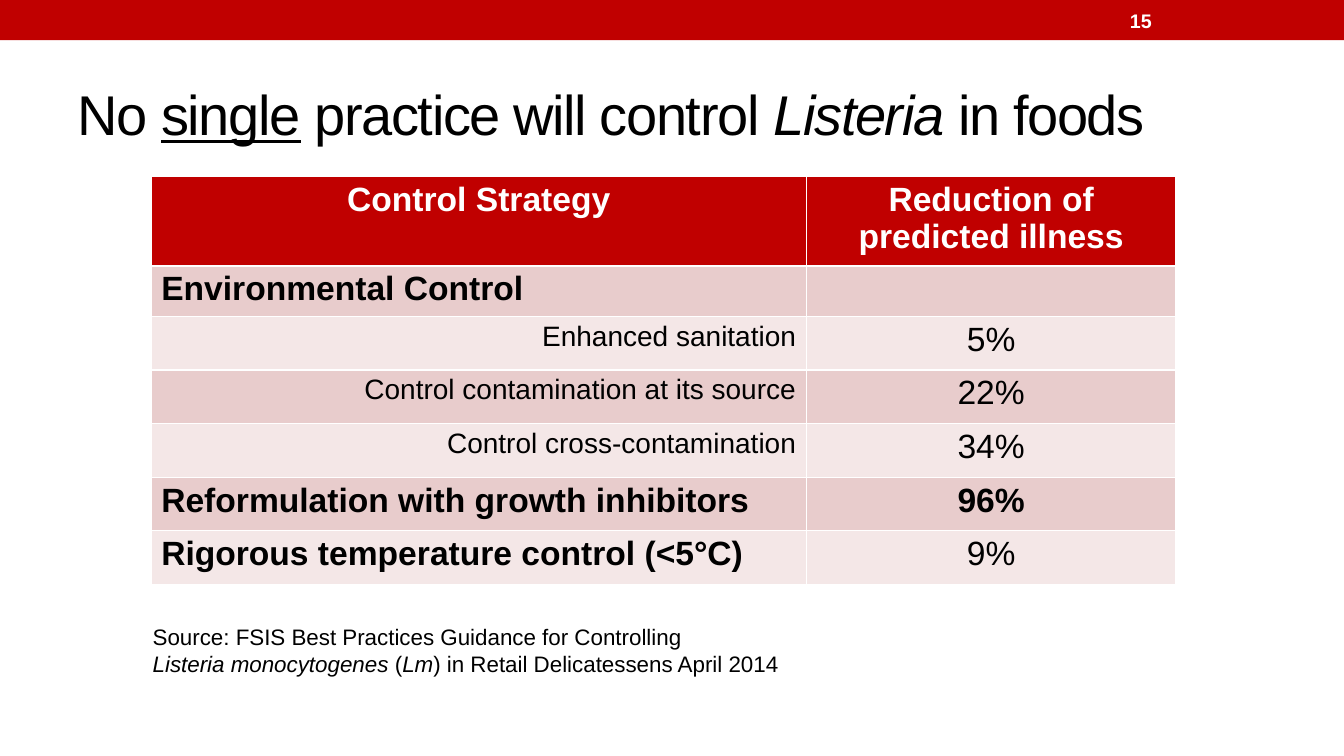
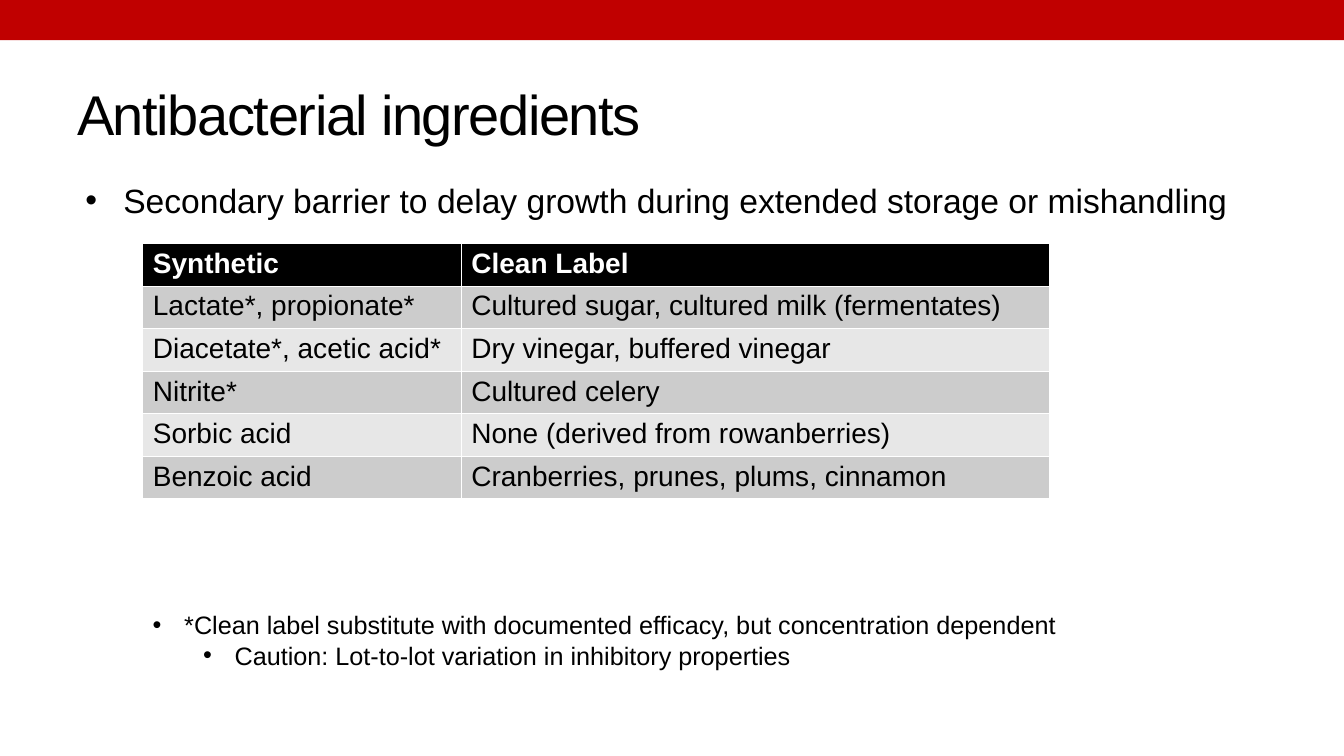
from lxml import etree
from pptx import Presentation
from pptx.dml.color import RGBColor
from pptx.enum.shapes import MSO_SHAPE
from pptx.enum.text import MSO_ANCHOR, PP_ALIGN
from pptx.oxml.ns import qn
from pptx.util import Pt

RECTANGLE = MSO_SHAPE.RECTANGLE
TOP, MIDDLE = MSO_ANCHOR.TOP, MSO_ANCHOR.MIDDLE
LEFT, CENTER, RIGHT = PP_ALIGN.LEFT, PP_ALIGN.CENTER, PP_ALIGN.RIGHT

FONT = "Arial"
COLORS = {
    "red": "C00000", "black": "000000", "white": "FFFFFF",
    "rose": "E8CCCC", "pale_rose": "F4E7E7",
    "gray": "CCCCCC", "pale_gray": "E7E7E7",
}
SLIDE_WIDTH, SLIDE_HEIGHT = 960, 540
BAND_HEIGHT = 28.8
TITLE_BOX = (48, 42, 864, 78)
NUMBER_BOX = (800, 1.5, 112, 26)
CELL_MARGIN = 3.2


def color(name):
    """Return the named palette colour."""
    return RGBColor.from_string(COLORS[name])


def add_runs(paragraph, runs, size, ink="black", bold=False, spacing=None):
    """Add (text, style) runs; style may hold b, i and u."""
    for text, style in runs:
        run = paragraph.add_run()
        run.text = text
        font = run.font
        font.name, font.size = FONT, Pt(size)
        font.color.rgb = color(ink)
        font.bold = bold or "b" in style
        font.italic = "i" in style
        font.underline = "u" in style
        if spacing is not None:
            run._r.get_or_add_rPr().set("spc", str(spacing * 100))


def add_bullet(paragraph, indent, hang):
    """Give the paragraph a hanging round bullet."""
    properties = paragraph._p.get_or_add_pPr()
    properties.set("marL", str(Pt(indent)))
    properties.set("indent", str(-Pt(hang)))
    etree.SubElement(properties, qn("a:buFont")).set("typeface", FONT)
    etree.SubElement(properties, qn("a:buChar")).set("char", "•")


def add_text(slide, box, paragraphs, size, anchor=TOP, indents=(), hang=0,
             line_spacing=None, **style):
    """Place a wrapped text box, with bullets where indents are given."""
    frame = slide.shapes.add_textbox(*map(Pt, box)).text_frame
    frame.word_wrap = True
    frame.vertical_anchor = anchor
    for index, runs in enumerate(paragraphs):
        paragraph = frame.add_paragraph() if index else frame.paragraphs[0]
        if line_spacing:
            paragraph.line_spacing = line_spacing
        if indents:
            add_bullet(paragraph, indents[index], hang)
        add_runs(paragraph, runs, size, **style)


def add_table(slide, box, widths, heights, rows, header_fill, band_fills):
    """Place a banded table of (text, size, align, bold) cells."""
    frame = slide.shapes.add_table(len(rows), len(widths), *map(Pt, box))
    table = frame.table
    for column, width in zip(table.columns, widths):
        column.width = Pt(width)
    for index, (row, height, cells) in enumerate(zip(table.rows, heights, rows)):
        row.height = Pt(height)
        fill = band_fills[(index - 1) % 2] if index else header_fill
        for cell, (text, size, align, bold) in zip(row.cells, cells):
            cell.margin_top = cell.margin_bottom = Pt(CELL_MARGIN)
            cell.fill.solid()
            cell.fill.fore_color.rgb = color(fill)
            paragraph = cell.text_frame.paragraphs[0]
            paragraph.alignment = align
            if text:
                ink = "black" if index else "white"
                add_runs(paragraph, [(text, "")], size, ink, bold)


def add_base_slide(presentation, title_runs):
    """Add a blank slide with the red band and its title."""
    slide = presentation.slides.add_slide(presentation.slide_layouts[6])
    band = slide.shapes.add_shape(RECTANGLE, 0, 0, Pt(SLIDE_WIDTH), Pt(BAND_HEIGHT))
    band.shadow.inherit = False
    band.fill.solid()
    band.fill.fore_color.rgb = color("red")
    band.line.fill.background()
    add_text(slide, TITLE_BOX, [title_runs], 40, MIDDLE, spacing=-1)
    return slide


def build_control_slide(presentation):
    """Build the slide that compares control strategies."""
    slide = add_base_slide(presentation, [
        ("No ", ""), ("single", "u"), (" practice will control ", ""),
        ("Listeria ", "i"), ("in foods", ""),
    ])
    add_text(slide, NUMBER_BOX, [[("15", "")]], 14, MIDDLE, ink="white", bold=True)

    def strategy(name, reduction, bold=False):
        return [(name, 24, LEFT, True), (reduction, 24, CENTER, bold)]

    def detail(name, reduction):
        return [(name, 20, RIGHT, False), (reduction, 24, CENTER, False)]

    rows = [
        [("Control Strategy", 24, CENTER, True),
         ("Reduction of predicted illness", 24, CENTER, True)],
        strategy("Environmental Control", ""),
        detail("Enhanced sanitation", "5%"),
        detail("Control contamination at its source", "22%"),
        detail("Control cross-contamination", "34%"),
        strategy("Reformulation with growth inhibitors", "96%", True),
        strategy("Rigorous temperature control (<5°C)", "9%"),
    ]
    heights = [62, 36] + [38.3] * 5
    add_table(slide, (108, 126, 732, sum(heights)), (468, 264), heights, rows,
              "red", ("rose", "pale_rose"))
    add_text(slide, (102, 441.5, 546, 46), [
        [("Source: FSIS Best Practices Guidance for Controlling", "")],
        [("Listeria monocytogenes ", "i"), ("(", ""), ("Lm", "i"),
         (") in Retail Delicatessens April 2014", "")],
    ], 16)


def build_ingredients_slide(presentation):
    """Build the slide that pairs synthetic and clean label ingredients."""
    slide = add_base_slide(presentation, [("Antibacterial ingredients", "")])
    pairs = [
        ("Synthetic", "Clean Label"),
        ("Lactate*, propionate*", "Cultured sugar, cultured milk (fermentates)"),
        ("Diacetate*, acetic acid*", "Dry vinegar, buffered vinegar"),
        ("Nitrite*", "Cultured celery"),
        ("Sorbic acid", "None (derived from rowanberries)"),
        ("Benzoic acid", "Cranberries, prunes, plums, cinnamon"),
    ]
    rows = [[(text, 20, LEFT, index == 0) for text in pair]
            for index, pair in enumerate(pairs)]
    heights = [29.5] * len(rows)
    add_table(slide, (102, 174, 648, sum(heights)), (227.5, 420.5), heights, rows,
              "black", ("gray", "pale_gray"))
    add_text(slide, (102, 432, 666, 51), [
        [("*Clean label substitute with documented efficacy, "
          "but concentration dependent", "")],
        [("Caution: Lot-to-lot variation in inhibitory properties", "")],
    ], 18, indents=(22.5, 58.5), hang=22.5)
    add_text(slide, (54, 128, 864, 33), [
        [("Secondary barrier to delay growth during extended storage "
          "or mishandling", "")],
    ], 24, indents=(27,), hang=27, line_spacing=0.9)


def main():
    """Build and save the presentation."""
    presentation = Presentation()
    presentation.slide_width = Pt(SLIDE_WIDTH)
    presentation.slide_height = Pt(SLIDE_HEIGHT)
    build_control_slide(presentation)
    build_ingredients_slide(presentation)
    presentation.save("out.pptx")


if __name__ == "__main__":
    main()
